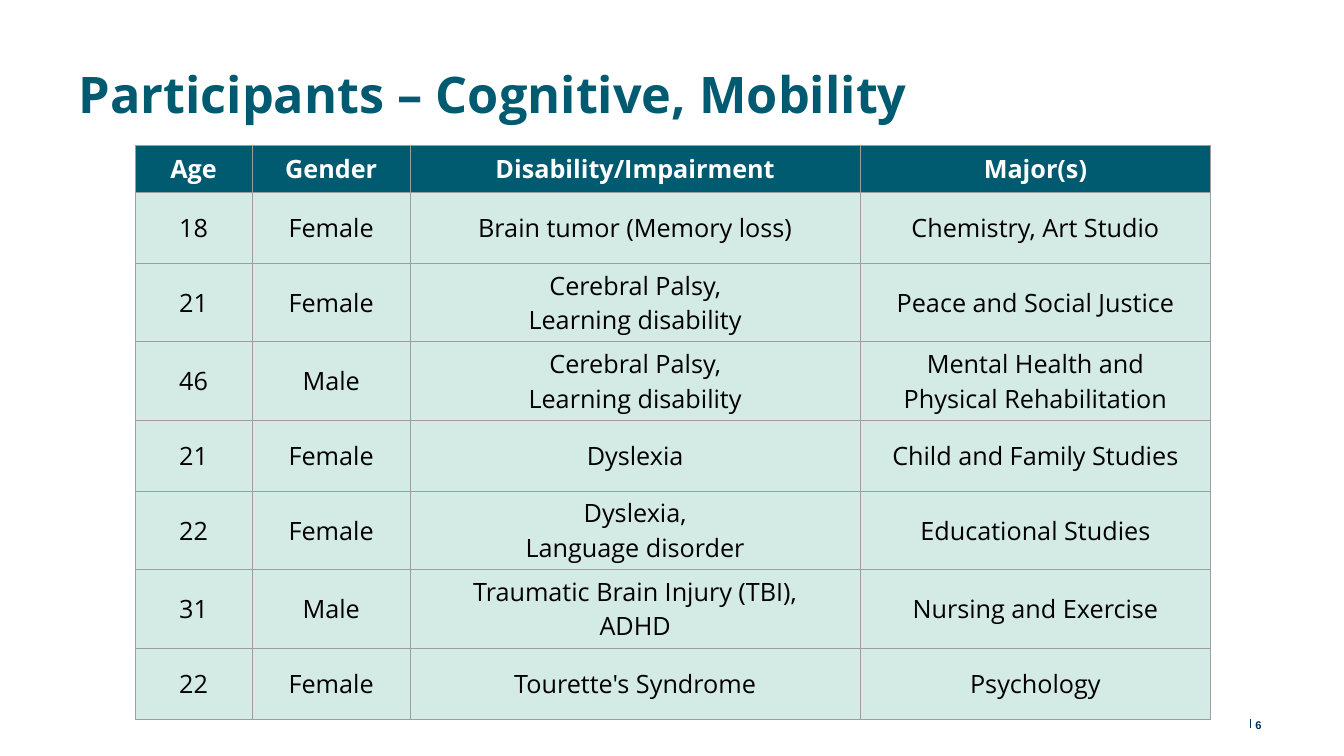
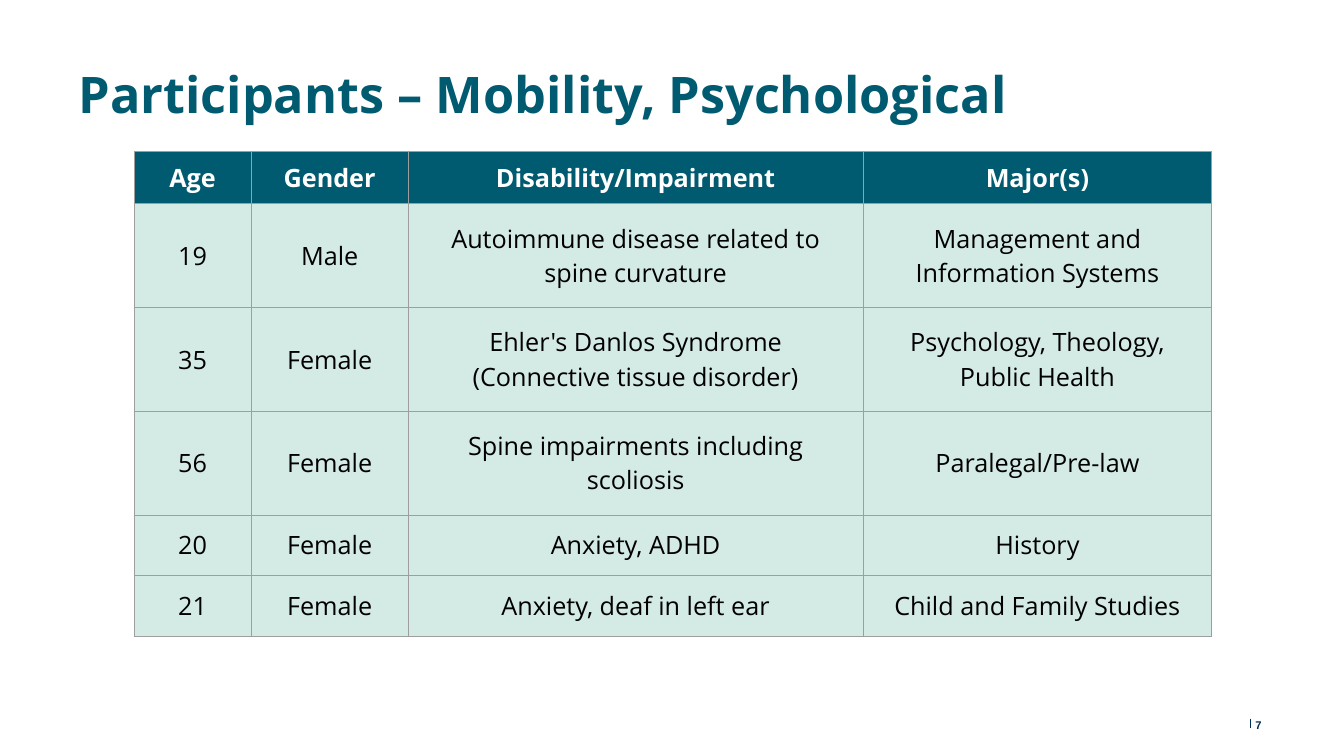
import pptx
import pptx.dml.color
import pptx.enum.shapes
import pptx.enum.text
import pptx.oxml.ns
import pptx.util
from lxml import etree

Inches = pptx.util.Inches
Pt = pptx.util.Pt
qn = pptx.oxml.ns.qn
ANCHOR = pptx.enum.text.MSO_ANCHOR
CENTER = pptx.enum.text.PP_ALIGN.CENTER

# Content: "\n" starts a paragraph, "\v" breaks a line
HEADER = ("Age", "Gender", "Disability/Impairment", "Major(s)")
SLIDES = [
    {
        "number": "6",
        "title": "Participants – Cognitive, Mobility",
        "corner": (1.34, 1.44),
        "columns": (1.16, 1.57, 4.46, 3.48),
        "heights": [0.47] + [0.7] * 7,
        "rows": [
            ("18", "Female", "Brain tumor (Memory loss)", "Chemistry, Art Studio"),
            ("21", "Female", "Cerebral Palsy,\nLearning disability", "Peace and Social Justice"),
            ("46", "Male", "Cerebral Palsy,\vLearning disability",
             "Mental Health and\vPhysical Rehabilitation"),
            ("21", "Female", "Dyslexia", "Child and Family Studies"),
            ("22", "Female", "Dyslexia,\nLanguage disorder", "Educational Studies"),
            ("31", "Male", "Traumatic Brain Injury (TBI),\vADHD", "Nursing and Exercise"),
            ("22", "Female", "Tourette's Syndrome", "Psychology"),
        ],
    },
    {
        "number": "7",
        "title": "Participants – Mobility, Psychological",
        "corner": (1.33, 1.5),
        "columns": (1.16, 1.56, 4.51, 3.46),
        "heights": [0.52] + [1.03] * 3 + [0.6] * 2,
        "rows": [
            ("19", "Male", "Autoimmune disease related to spine curvature",
             "Management and\vInformation Systems"),
            ("35", "Female", "Ehler's Danlos Syndrome\v(Connective tissue disorder)",
             "Psychology, Theology,\vPublic Health"),
            ("56", "Female", "Spine impairments including scoliosis", "Paralegal/Pre-law"),
            ("20", "Female", "Anxiety, ADHD", "History"),
            ("21", "Female", "Anxiety, deaf in left ear", "Child and Family Studies"),
        ],
    },
]

# Shared style
TEAL, MINT, NAVY, GREY = "005A70", "D4EAE4", "003057", "9E9E9E"
TITLE_FONT = {"name": "Open Sans", "size": Pt(36), "bold": True, "color": TEAL}
HEAD_FONT = {"name": "Open Sans", "size": Pt(18), "bold": True, "color": "FFFFFF"}
BODY_FONT = {**HEAD_FONT, "bold": False, "color": "000000"}
NUMBER_FONT = {"name": "Arial", "size": Pt(8), "bold": True, "color": NAVY}
MARGINS = ("margin_left", "margin_top", "margin_right", "margin_bottom")


def rgb(code):
    return pptx.dml.color.RGBColor.from_string(code)


def format_font(font, values):
    for name, value in values.items():
        if name == "color":
            font.color.rgb = rgb(value)
        else:
            setattr(font, name, value)


def format_text(frame, text, values, align=None):
    frame.text = text
    for para in frame.paragraphs:
        para.alignment = align
        format_font(para.font, values)
        for span in para.runs:
            format_font(span.font, values)


def set_frame(frame, margin, anchor):
    frame.word_wrap = True
    frame.vertical_anchor = anchor
    for side in MARGINS:
        setattr(frame, side, Inches(margin))


def add_borders(cell):
    properties = cell._tc.get_or_add_tcPr()
    for side in ("a:lnL", "a:lnR", "a:lnT", "a:lnB"):
        line = etree.SubElement(properties, qn(side), w=str(Pt(0.75)))
        fill = etree.SubElement(line, qn("a:solidFill"))
        etree.SubElement(fill, qn("a:srgbClr"), val=GREY)


def add_title(page, text):
    title = page.shapes.title
    title.left, title.top, title.width, title.height = map(Inches, (0.68, 0.46, 11.97, 0.85))
    format_text(title.text_frame, text, TITLE_FONT, pptx.enum.text.PP_ALIGN.LEFT)
    set_frame(title.text_frame, 0.1, ANCHOR.TOP)
    title.text_frame.auto_size = pptx.enum.text.MSO_AUTO_SIZE.NONE
    title.text_frame.paragraphs[0].line_spacing = 1.11


def add_participants(page, content):
    columns, heights = content["columns"], content["heights"]
    rows = [HEADER] + content["rows"]
    left, top = content["corner"]
    table = page.shapes.add_table(
        len(rows), len(columns), Inches(left), Inches(top),
        Inches(sum(columns)), Inches(sum(heights))).table
    for column, width in zip(table.columns, columns):
        column.width = Inches(width)
    for index, (row, height, texts) in enumerate(zip(table.rows, heights, rows)):
        row.height = Inches(height)
        for cell, text in zip(row.cells, texts):
            format_text(cell.text_frame, text, BODY_FONT if index else HEAD_FONT, CENTER)
            cell.vertical_anchor = ANCHOR.MIDDLE
            add_borders(cell)
            cell.fill.solid()
            cell.fill.fore_color.rgb = rgb(MINT if index else TEAL)


def add_footer(page, number):
    rule = page.shapes.add_connector(
        pptx.enum.shapes.MSO_CONNECTOR.STRAIGHT,
        Inches(12.4), Inches(7.13), Inches(12.4), Inches(7.22))
    rule.line.color.rgb = rgb(NAVY)
    rule.line.width = Pt(0.75)
    etree.SubElement(rule._element.spPr, qn("a:effectLst"))
    box = page.shapes.add_textbox(Inches(12.45), Inches(7.13), Inches(0.18), Inches(0.12))
    set_frame(box.text_frame, 0, ANCHOR.MIDDLE)
    format_text(box.text_frame, number, NUMBER_FONT)


def main():
    deck = pptx.Presentation()
    deck.slide_width, deck.slide_height = Inches(13.33), Inches(7.5)
    title_only = deck.slide_layouts[5]
    for content in SLIDES:
        page = deck.slides.add_slide(title_only)
        add_title(page, content["title"])
        add_participants(page, content)
        add_footer(page, content["number"])
    deck.save("out.pptx")


if __name__ == "__main__":
    main()
